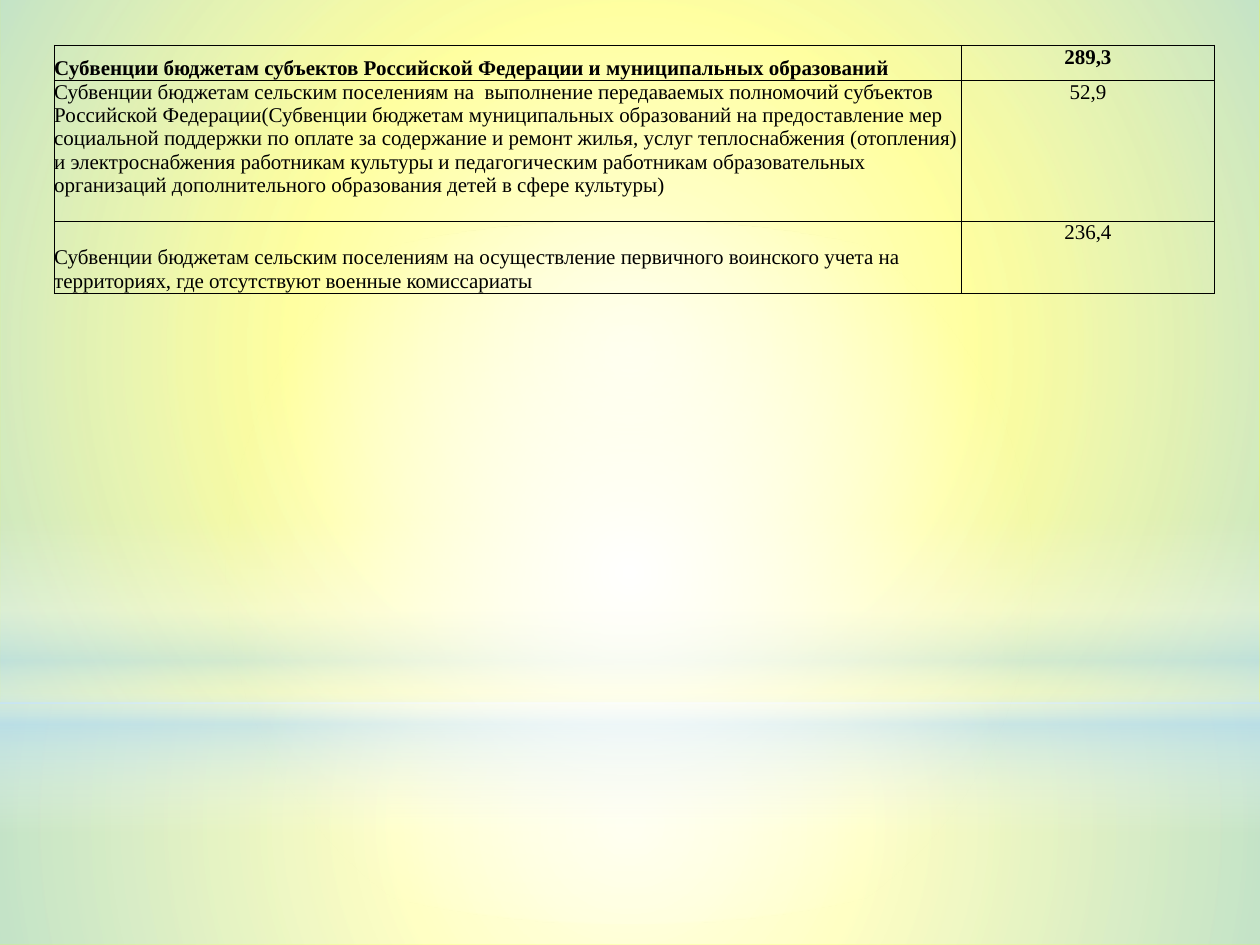
from lxml import etree
from pptx import Presentation, util as u
from pptx.dml.color import RGBColor
from pptx.enum import shapes, text
from pptx.oxml import parse_xml
from pptx.oxml.ns import nsdecls, qn

WHITE, SKY, YELLOW, BLACK = "FFFFFF", "B4DCFA", "FFFF00", "000000"
RECT, OVAL = shapes.MSO_SHAPE.RECTANGLE, shapes.MSO_SHAPE.OVAL

GLOWS = [
    (RECT, (0, 5.58, 10, 1.92), [(0, WHITE, 91), (37, WHITE, 76), (100, SKY, 79)], True),
    (RECT, (0, 0, 10, 5.58), [(0, WHITE, 89), (48, WHITE, 62), (100, SKY, 79)], True),
    (RECT, (0, 4.12, 10, 2.5), [(0, WHITE, 0), (29, WHITE, 30), (45, SKY, 40),
                                (55, WHITE, 26), (65, SKY, 60), (100, WHITE, 0)], False),
    (OVAL, (0, 1.75, 10, 5.58), [(0, WHITE, 100), (56, WHITE, 0)], True),
]

SUBVENTIONS = [
    ("Субвенции бюджетам субъектов Российской Федерации и муниципальных образований", "289,3"),
    ("Субвенции бюджетам сельским поселениям на  выполнение передаваемых полномочий "
     "субъектов Российской Федерации(Субвенции бюджетам муниципальных образований на "
     "предоставление мер социальной поддержки по оплате за содержание и ремонт жилья, "
     "услуг теплоснабжения (отопления) и электроснабжения работникам культуры и "
     "педагогическим работникам образовательных организаций дополнительного образования "
     "детей в сфере культуры)", "52,9"),
    ("Субвенции бюджетам сельским поселениям на осуществление первичного воинского учета "
     "на территориях, где отсутствуют военные комиссариаты", "236,4"),
]
COLUMN_WIDTHS = [7.2, 2.01]
ROW_HEIGHTS = [0.28, 1.11, 0.57]
BOTTOM_GAPS = [0, 0.19, 0]


def color(value):
    """Turn a hex string into a colour."""
    return RGBColor.from_string(value)


def set_gradient(shape, stops, radial):
    """Fill a shape with translucent stops, radial or from top to bottom."""
    marks = "".join(
        f'<a:gs pos="{pos * 1000}"><a:srgbClr val="{value}">'
        f'<a:alpha val="{opacity * 1000}"/></a:srgbClr></a:gs>'
        for pos, value, opacity in stops)
    course = ('<a:path path="circle"><a:fillToRect l="50000" t="50000" r="50000" b="50000"/>'
              '</a:path>' if radial else '<a:lin ang="5400000" scaled="0"/>')
    gradient = parse_xml(f'<a:gradFill {nsdecls("a")} rotWithShape="1">'
                         f'<a:gsLst>{marks}</a:gsLst>{course}</a:gradFill>')
    shape.fill.background()
    properties = shape._element.spPr
    properties.replace(properties.find(qn("a:noFill")), gradient)


def add_backdrop(slide):
    """Paint the yellow ground and the glows over it."""
    ground = slide.background.fill
    ground.solid()
    ground.fore_color.rgb = color(YELLOW)
    for kind, box, stops, radial in GLOWS:
        glow = slide.shapes.add_shape(kind, *map(u.Inches, box))
        glow.shadow.inherit = False
        glow.line.fill.background()
        set_gradient(glow, stops, radial)


def set_borders(cell):
    """Draw a thin black line on each side of a cell."""
    properties = cell._tc.get_or_add_tcPr()
    for place, side in enumerate(("lnL", "lnR", "lnT", "lnB")):
        line = etree.Element(qn(f"a:{side}"), w=str(u.Pt(0.5)))
        fill = etree.SubElement(line, qn("a:solidFill"))
        etree.SubElement(fill, qn("a:srgbClr"), val=BLACK)
        properties.insert(place, line)


def write_cell(cell, words, bold, align, anchor, bottom_gap):
    """Set the text, margins, fill and borders of a cell."""
    cell.margin_left = cell.margin_right = cell.margin_top = 0
    cell.margin_bottom = u.Inches(bottom_gap)
    cell.vertical_anchor = anchor
    cell.fill.background()
    set_borders(cell)
    paragraph = cell.text_frame.paragraphs[0]
    paragraph.alignment = align
    run = paragraph.add_run()
    run.text = words
    run.font.name = "Times New Roman"
    run.font.size = u.Pt(12)
    run.font.bold = bold
    run.font.color.rgb = color(BLACK)


def add_subventions(slide, left, top):
    """Place the table of subventions and their amounts."""
    table = slide.shapes.add_table(
        len(SUBVENTIONS), len(COLUMN_WIDTHS), u.Inches(left), u.Inches(top),
        u.Inches(sum(COLUMN_WIDTHS)), u.Inches(sum(ROW_HEIGHTS))).table
    table.first_row = table.horz_banding = False
    for column, width in zip(table.columns, COLUMN_WIDTHS):
        column.width = u.Inches(width)
    for index, (purpose, amount) in enumerate(SUBVENTIONS):
        table.rows[index].height = u.Inches(ROW_HEIGHTS[index])
        bold = index == 0
        write_cell(table.cell(index, 0), purpose, bold, text.PP_ALIGN.LEFT,
                   text.MSO_ANCHOR.BOTTOM, BOTTOM_GAPS[index])
        write_cell(table.cell(index, 1), amount, bold, text.PP_ALIGN.CENTER,
                   text.MSO_ANCHOR.TOP, 0)


def main():
    """Build the slide and save it."""
    deck = Presentation()
    deck.slide_width, deck.slide_height = u.Inches(10), u.Inches(7.5)
    slide = deck.slides.add_slide(deck.slide_layouts[6])
    add_backdrop(slide)
    add_subventions(slide, 0.43, 0.36)
    deck.save("out.pptx")


if __name__ == "__main__":
    main()
